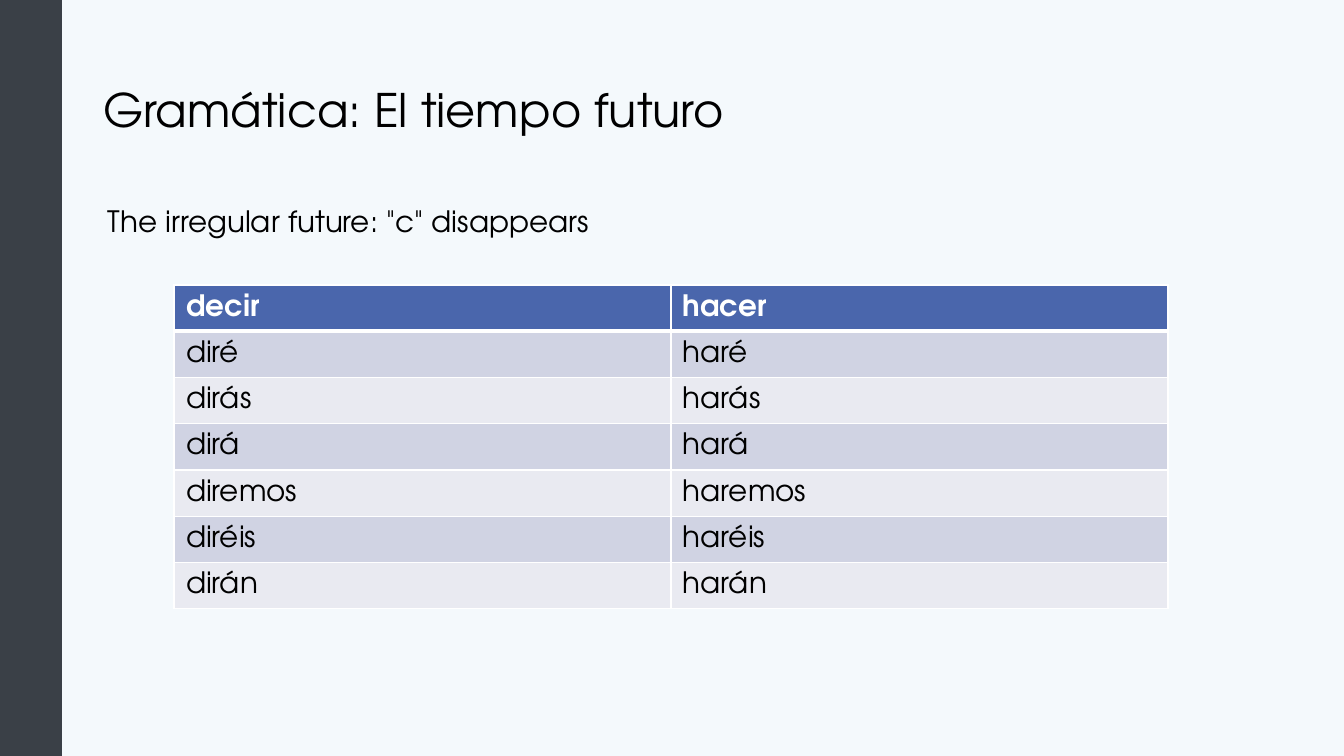
from lxml.etree import SubElement
from pptx import Presentation
from pptx.dml.color import RGBColor
from pptx.enum.shapes import MSO_SHAPE
from pptx.enum.text import MSO_ANCHOR, MSO_AUTO_SIZE, PP_ALIGN
from pptx.oxml.ns import qn
from pptx.util import Pt

PX = 914400 / 100.8  # EMU in one px
FONT = "TeX Gyre Adventor"
BLACK = RGBColor(0x00, 0x00, 0x00)
WHITE = RGBColor(0xFF, 0xFF, 0xFF)
BACKGROUND = RGBColor(0xF4, 0xF9, 0xFC)
SIDEBAR = RGBColor(0x3A, 0x40, 0x47)
HEADER = RGBColor(0x4A, 0x66, 0xAC)
BANDS = [RGBColor(0xE9, 0xEA, 0xF1), RGBColor(0xD0, 0xD3, 0xE3)]

CONJUGATION = [
    ("decir", "hacer"),
    ("diré", "haré"),
    ("dirás", "harás"),
    ("dirá", "hará"),
    ("diremos", "haremos"),
    ("diréis", "haréis"),
    ("dirán", "harán"),
]


def px(*lengths):
    return [round(length * PX) for length in lengths]


def place(shape, *box):
    for name, length in zip(("left", "top", "width", "height"), px(*box)):
        setattr(shape, name, length)


def write(frame, text, size, color=BLACK, bold=False):
    """Put one formatted line into a text frame."""
    frame.word_wrap = True
    paragraph = frame.paragraphs[0]
    paragraph.alignment = PP_ALIGN.LEFT
    run = paragraph.add_run()
    run.text = text
    font_format = {"name": FONT, "size": Pt(size), "bold": bold}
    for name, value in font_format.items():
        setattr(run.font, name, value)
    run.font.color.rgb = color
    return paragraph


def add_sidebar(slide):
    shape = slide.shapes.add_shape(MSO_SHAPE.RECTANGLE, *px(0, 0, 62, 756))
    shape.shadow.inherit = False
    shape.fill.solid()
    shape.fill.fore_color.rgb = SIDEBAR
    shape.line.fill.background()


def add_title(slide, text):
    title = slide.shapes.title
    place(title, 93, 40, 1159, 146)
    title.text_frame.auto_size = MSO_AUTO_SIZE.NONE
    title.text_frame.vertical_anchor = MSO_ANCHOR.MIDDLE
    write(title.text_frame, text, 33).line_spacing = 0.9


def add_subtitle(slide, text):
    box = slide.shapes.add_textbox(*px(93, 202, 1159, 60))
    box.text_frame.margin_left = px(15)[0]
    paragraph = write(box.text_frame, text, 21)
    paragraph.line_spacing = 0.9
    paragraph.space_before = Pt(7.5)


def add_borders(cell, bottom, top):
    properties = cell._tc.get_or_add_tcPr()
    widths = {"a:lnL": 1, "a:lnR": 1, "a:lnT": top, "a:lnB": bottom}
    for tag, width in widths.items():
        line = SubElement(properties, qn(tag), w=str(Pt(width)))
        fill = SubElement(line, qn("a:solidFill"))
        SubElement(fill, qn("a:srgbClr"), val=str(WHITE))


def add_verb_table(slide, rows):
    column_width, row_height = px(497, 46.25)
    left, top = px(174, 285)
    frame = slide.shapes.add_table(
        len(rows), 2, left, top, 2 * column_width, len(rows) * row_height)
    table = frame.table
    margins = dict(zip(
        ("margin_left", "margin_right", "margin_top", "margin_bottom"),
        px(12, 12, 4, 4)))
    for row_index, verbs in enumerate(rows):
        is_header = row_index == 0
        for column_index, verb in enumerate(verbs):
            cell = table.cell(row_index, column_index)
            for name, value in margins.items():
                setattr(cell, name, value)
            cell.vertical_anchor = MSO_ANCHOR.MIDDLE
            # Borders come before the fill in the cell properties
            add_borders(cell, bottom=3 if is_header else 1,
                        top=3 if row_index == 1 else 1)
            cell.fill.solid()
            cell.fill.fore_color.rgb = HEADER if is_header else BANDS[row_index % 2]
            write(cell.text_frame, verb, 21,
                  WHITE if is_header else BLACK, is_header)


def main():
    presentation = Presentation()
    presentation.slide_width, presentation.slide_height = px(1344, 756)
    slide = presentation.slides.add_slide(presentation.slide_layouts[5])

    # Backdrop
    slide.background.fill.solid()
    slide.background.fill.fore_color.rgb = BACKGROUND
    add_sidebar(slide)

    # Content
    add_title(slide, "Gramática: El tiempo futuro")
    add_subtitle(slide, 'The irregular future: "c" disappears')
    add_verb_table(slide, CONJUGATION)

    presentation.save("out.pptx")


if __name__ == "__main__":
    main()
